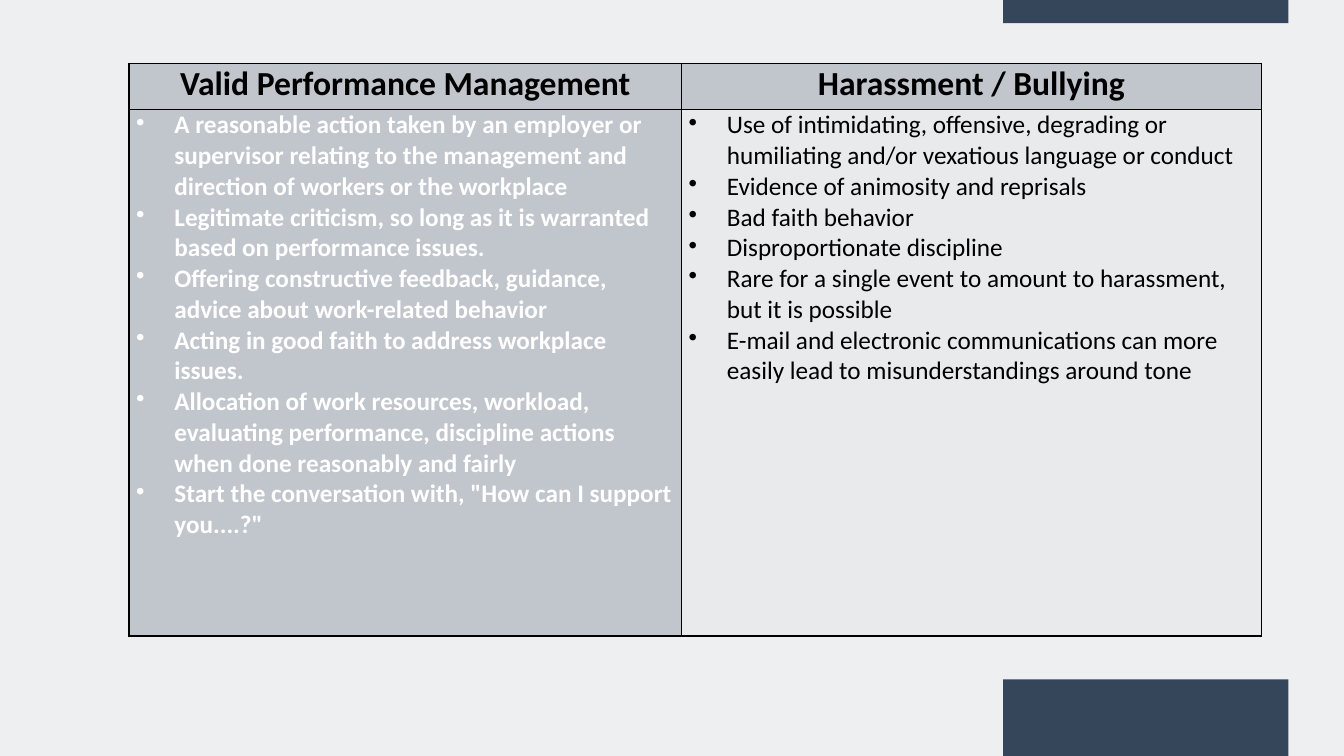
"""Build a slide comparing valid performance management with harassment."""
from lxml.etree import SubElement
from pptx import Presentation
from pptx.dml.color import RGBColor
from pptx.enum.shapes import MSO_SHAPE
from pptx.enum.text import PP_ALIGN
from pptx.oxml.ns import qn
from pptx.util import Inches, Pt

COLORS = {
    "background": "EDEFF0",
    "navy": "35465B",
    "gray": "C1C5CC",
    "pale": "E9EAEC",
    "black": "000000",
    "white": "FFFFFF",
}
HEADINGS = ["Valid Performance Management", "Harassment / Bullying"]
VALID_ACTIONS = [
    "A reasonable action taken by an employer or supervisor relating to the "
    "management and direction of workers or the workplace",
    "Legitimate criticism, so long as it is warranted based on performance issues.",
    "Offering constructive feedback, guidance, advice about work-related behavior",
    "Acting in good faith to address workplace issues.",
    "Allocation of work resources, workload, evaluating performance, discipline "
    "actions when done reasonably and fairly",
    'Start the conversation with, "How can I support you....?"',
]
HARASSMENT_SIGNS = [
    "Use of intimidating, offensive, degrading or humiliating and/or vexatious "
    "language or conduct",
    "Evidence of animosity and reprisals",
    "Bad faith behavior",
    "Disproportionate discipline",
    "Rare for a single event to amount to harassment, but it is possible",
    "E-mail and electronic communications can more easily lead to "
    "misunderstandings around tone",
]


def color(name):
    return RGBColor.from_string(COLORS[name])


def fill_cell(cell, lines, fill, text_color, size, bold, bulleted):
    cell.margin_left = cell.margin_right = Inches(0.07)
    cell.margin_top = cell.margin_bottom = 0
    properties = cell._tc.get_or_add_tcPr()
    for side in ("a:lnL", "a:lnR", "a:lnT", "a:lnB"):
        border = SubElement(properties, qn(side), w=str(Pt(1)))
        solid = SubElement(border, qn("a:solidFill"))
        SubElement(solid, qn("a:srgbClr"), val=COLORS["black"])
    cell.fill.solid()
    cell.fill.fore_color.rgb = color(fill)
    cell.text = "\n".join(lines)
    for para in cell.text_frame.paragraphs:
        if bulleted:
            indent = para._p.get_or_add_pPr()
            indent.set("marL", str(Inches(0.38)))
            indent.set("indent", str(Inches(-0.38)))
            SubElement(indent, qn("a:buChar"), char="•")
        else:
            para.alignment = PP_ALIGN.CENTER
        para.font.name = "Calibri"
        para.font.size = Pt(size)
        para.font.bold = bold
        para.font.color.rgb = color(text_color)


deck = Presentation()
deck.slide_width, deck.slide_height = Inches(13.33), Inches(7.5)
page = deck.slides.add_slide(deck.slide_layouts[6])
page.background.fill.solid()
page.background.fill.fore_color.rgb = color("background")

for top, height in ((0, 0.23), (6.74, 0.76)):
    block = page.shapes.add_shape(
        MSO_SHAPE.RECTANGLE, Inches(9.95), Inches(top), Inches(2.83), Inches(height)
    )
    block.shadow.inherit = False
    block.fill.solid()
    block.fill.fore_color.rgb = color("navy")
    block.line.fill.background()

table = page.shapes.add_table(
    2, 2, Inches(1.28), Inches(0.63), Inches(11.23), Inches(5.68)
).table
for column, width in zip(table.columns, (5.48, 5.75)):
    column.width = Inches(width)
for row, height in zip(table.rows, (0.46, 5.22)):
    row.height = Inches(height)

for index, heading in enumerate(HEADINGS):
    fill_cell(table.cell(0, index), [heading], "gray", "black", 24, True, False)
fill_cell(table.cell(1, 0), VALID_ACTIONS, "gray", "white", 18, True, True)
fill_cell(table.cell(1, 1), HARASSMENT_SIGNS, "pale", "black", 18, False, True)

deck.save("out.pptx")
